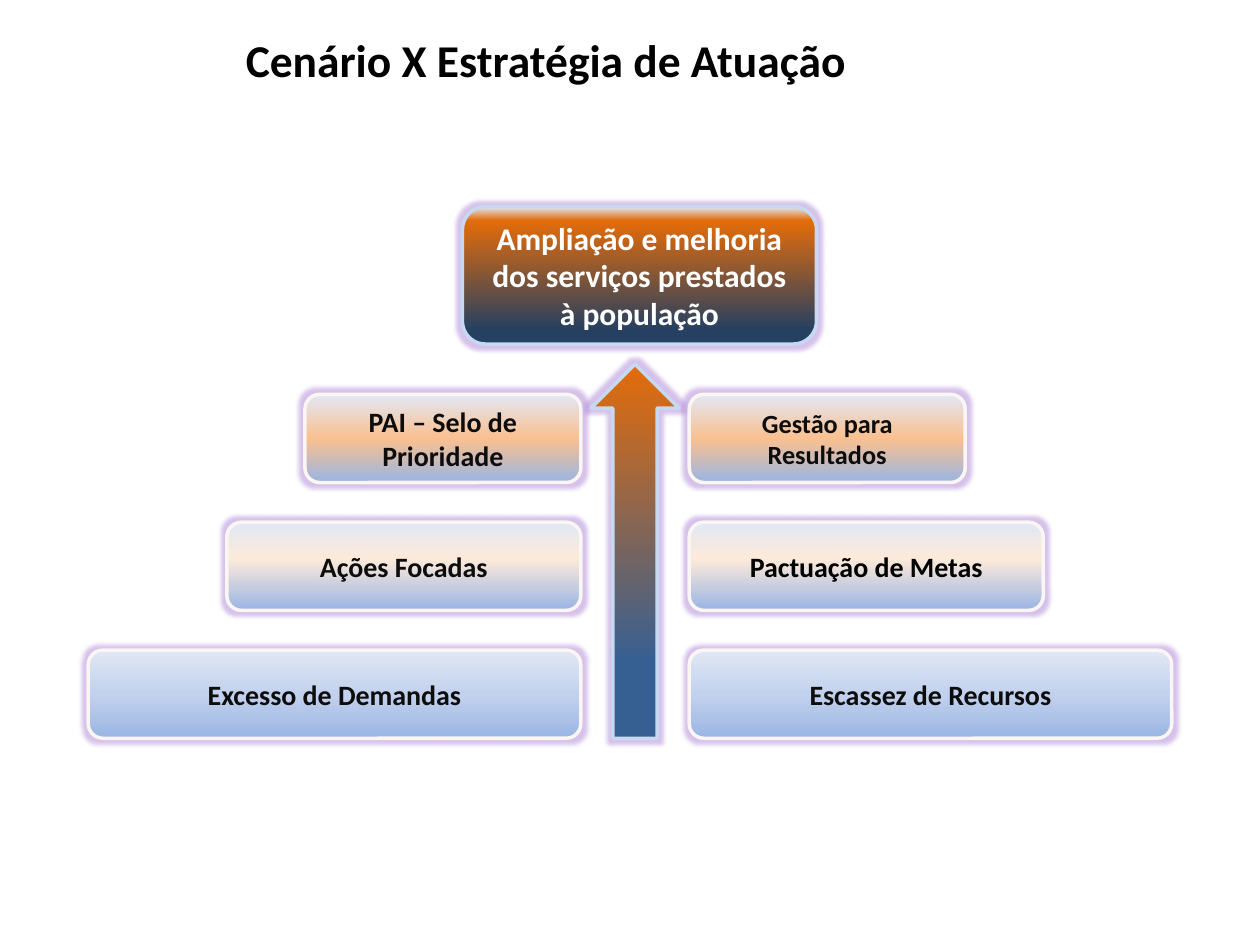
from lxml.etree import SubElement
from pptx import Presentation
from pptx.dml.color import RGBColor
from pptx.enum.shapes import MSO_SHAPE as Shape
from pptx.enum.text import MSO_ANCHOR as Anchor, PP_ALIGN as Align
from pptx.oxml.ns import qn
from pptx.util import Inches, Pt

# Content
TITLE = "Cenário X Estratégia de Atuação"
GOAL = "Ampliação e melhoria dos serviços prestados à população"
# From bottom to top: gradient, then (text, width, size, colour) left and right
LEVELS = [
    ("demand", ("Excesso de Demandas", 3.91, 16, "ink"),
     ("Escassez de Recursos", 3.83, 16, "ink")),
    ("focus", ("Ações Focadas", 2.81, 16, "ink"),
     ("Pactuação de Metas", 2.81, 16, "black")),
    ("result", ("PAI – Selo de Prioridade", 2.19, 16, "ink"),
     ("Gestão para Resultados", 2.19, 15, "ink")),
]

COLOURS = {
    "black": "000000", "ink": "0D0D0D", "white": "FFFFFF",
    "box line": "FBF5F3", "accent line": "C6D9F1", "glow": "9866CC",
    "blue": "9AB5E4", "mid blue": "C2D1ED", "pale blue": "E1E8F5",
    "cream": "FDEADA", "peach": "FAC090", "light peach": "FCD5B5",
    "orange": "E46C0A", "navy": "254061", "arrow blue": "376092",
}
# Gradient stops from the bottom of a shape to its top, in percent
GRADIENTS = {
    "demand": [(0, "blue"), (50, "mid blue"), (100, "pale blue")],
    "focus": [(0, "blue"), (59, "cream"), (100, "pale blue")],
    "result": [(0, "blue"), (50, "peach"), (100, "pale blue")],
    "goal": [(10, "navy"), (90, "orange"), (100, "pale blue")],
    "arrow": [(21, "arrow blue"), (100, "orange"), (100, "light peach")],
}

# Layout
LEFT_EDGE, RIGHT_EDGE = 4.61, 5.47
BOTTOM_TOP, LEVEL_STEP, LEVEL_HEIGHT = 5.16, 1.015, 0.7


def write_text(shape, text, size, colour):
    frame = shape.text_frame
    frame.word_wrap = True
    frame.vertical_anchor = Anchor.MIDDLE
    paragraph = frame.paragraphs[0]
    paragraph.alignment = Align.CENTER
    run = paragraph.add_run()
    run.text = text
    run.font.name = "Calibri"
    run.font.size = Pt(size)
    run.font.bold = True
    run.font.color.rgb = RGBColor.from_string(COLOURS[colour])


def fill_gradient(shape, stops):
    shape.fill.gradient()
    shape.fill.gradient_angle = 90
    stop_list = shape._element.spPr.find(".//" + qn("a:gsLst"))
    for old_stop in list(stop_list):
        stop_list.remove(old_stop)
    for percent, colour in stops:
        stop = SubElement(stop_list, qn("a:gs"), pos=str(percent * 1000))
        SubElement(stop, qn("a:srgbClr"), val=COLOURS[colour])


def add_glow(shape):
    shape.shadow.inherit = False
    effects = shape._element.spPr.find(qn("a:effectLst"))
    glow = SubElement(effects, qn("a:glow"), rad=str(Pt(5)))
    colour = SubElement(glow, qn("a:srgbClr"), val=COLOURS["glow"])
    SubElement(colour, qn("a:alpha"), val="40000")


def add_glowing_shape(slide, kind, box, gradient, line):
    shape = slide.shapes.add_shape(kind, *map(Inches, box))
    fill_gradient(shape, GRADIENTS[gradient])
    shape.line.color.rgb = RGBColor.from_string(COLOURS[line])
    shape.line.width = Pt(2)
    add_glow(shape)
    return shape


def main():
    presentation = Presentation()
    presentation.slide_width, presentation.slide_height = Inches(10), Inches(7.5)
    slide = presentation.slides.add_slide(presentation.slide_layouts[6])

    # Title
    title = slide.shapes.add_textbox(*map(Inches, (1.17, 0.08, 6.33, 0.78)))
    write_text(title, TITLE, size=26, colour="black")

    # Pairs of boxes on both sides of the arrow
    for index, (gradient, *pair) in enumerate(LEVELS):
        top = BOTTOM_TOP - index * LEVEL_STEP
        lefts = (LEFT_EDGE - pair[0][1], RIGHT_EDGE)
        for left, (text, width, size, colour) in zip(lefts, pair):
            box = add_glowing_shape(slide, Shape.ROUNDED_RECTANGLE,
                                    (left, top, width, LEVEL_HEIGHT),
                                    gradient, "box line")
            write_text(box, text, size=size, colour=colour)

    # Goal and the arrow that leads up to it
    goal = add_glowing_shape(slide, Shape.ROUNDED_RECTANGLE,
                             (3.67, 1.64, 2.81, 1.09), "goal", "accent line")
    write_text(goal, GOAL, size=18, colour="white")
    add_glowing_shape(slide, Shape.UP_ARROW, (4.69, 2.89, 0.7, 2.97),
                      "arrow", "accent line")

    presentation.save("out.pptx")


if __name__ == "__main__":
    main()
